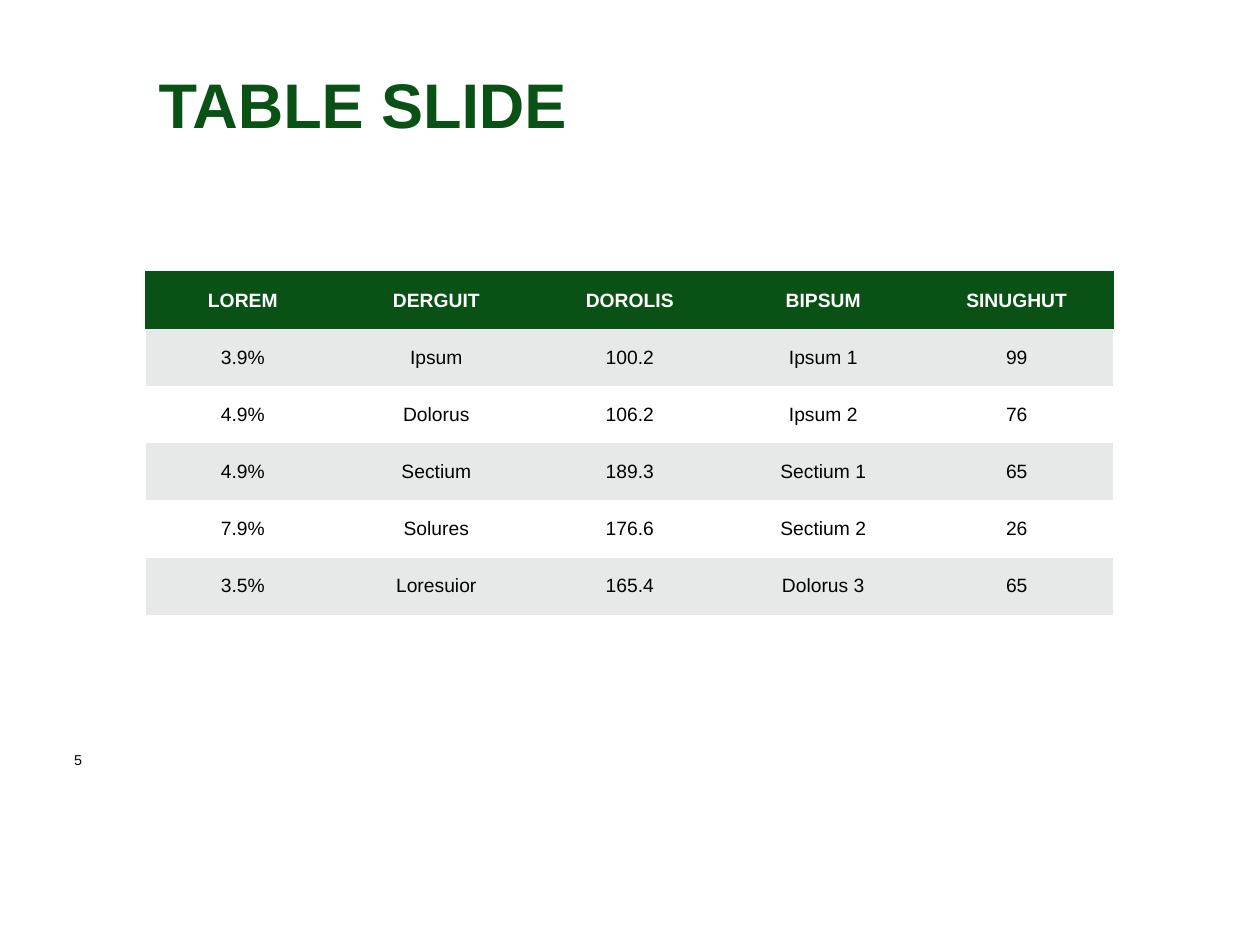
from dataclasses import dataclass

from pptx import Presentation
from pptx.dml.color import RGBColor
from pptx.enum.text import MSO_ANCHOR, PP_ALIGN
from pptx.oxml.xmlchemy import OxmlElement
from pptx.util import Pt

TOP, MIDDLE, BOTTOM = MSO_ANCHOR.TOP, MSO_ANCHOR.MIDDLE, MSO_ANCHOR.BOTTOM
CENTER = PP_ALIGN.CENTER
BLANK_LAYOUT = 6

HEADINGS = ["LOREM", "DERGUIT", "DOROLIS", "BIPSUM", "SINUGHUT"]
RECORDS = [
    ["3.9%", "Ipsum", "100.2", "Ipsum 1", "99"],
    ["4.9%", "Dolorus", "106.2", "Ipsum 2", "76"],
    ["4.9%", "Sectium", "189.3", "Sectium 1", "65"],
    ["7.9%", "Solures", "176.6", "Sectium 2", "26"],
    ["3.5%", "Loresuior", "165.4", "Dolorus 3", "65"],
]


@dataclass(frozen=True)
class Theme:
    font: str = "Arial"
    green: str = "095115"
    band: str = "E7E9E8"
    white: str = "FFFFFF"
    black: str = "000000"
    title_size: float = 36
    table_size: float = 11
    number_size: float = 8.2


class SlideBuilder:
    def __init__(self, slide, theme):
        self.slide = slide
        self.theme = theme

    def style(self, paragraph, size, color, bold=False):
        font = paragraph.font
        font.name, font.size, font.bold = self.theme.font, Pt(size), bold
        font.color.rgb = RGBColor.from_string(color)

    def text(self, wording, left, top, width, height, size, color,
             bold=False, anchor=TOP, bottom_inset=3.6):
        box = self.slide.shapes.add_textbox(Pt(left), Pt(top), Pt(width), Pt(height))
        frame = box.text_frame
        frame.word_wrap = True
        frame.vertical_anchor = anchor
        frame.margin_bottom = Pt(bottom_inset)
        frame.text = wording
        self.style(frame.paragraphs[0], size, color, bold)

    def borders(self, cell, colors):
        """Set each edge in schema order; None hides it."""
        properties = cell._tc.get_or_add_tcPr()
        for position, (edge, color) in enumerate(colors.items()):
            line = OxmlElement(f"a:{edge}")
            line.set("w", str(Pt(1)))
            fill = OxmlElement("a:solidFill" if color else "a:noFill")
            if color:
                shade = OxmlElement("a:srgbClr")
                shade.set("val", color)
                fill.append(shade)
            line.append(fill)
            properties.insert(position, line)

    def table(self, headings, records, left, top, column_width, row_height):
        theme = self.theme
        rows = [headings, *records]
        last = len(headings) - 1
        table = self.slide.shapes.add_table(
            len(rows), len(headings), Pt(left), Pt(top),
            Pt(column_width * len(headings)), Pt(row_height * len(rows))).table
        table.horz_banding = False
        for column in table.columns:
            column.width = Pt(column_width)
        for r, values in enumerate(rows):
            table.rows[r].height = Pt(row_height)
            header = r == 0
            fill = theme.green if header else theme.band if r % 2 else theme.white
            for c, value in enumerate(values):
                cell = table.cell(r, c)
                cell.fill.solid()
                cell.fill.fore_color.rgb = RGBColor.from_string(fill)
                cell.vertical_anchor = MIDDLE
                cell.margin_left = cell.margin_right = Pt(5)
                cell.margin_top = cell.margin_bottom = Pt(2.4)
                cell.text = value
                paragraph = cell.text_frame.paragraphs[0]
                paragraph.alignment = CENTER
                self.style(paragraph, theme.table_size,
                           theme.white if header else theme.black, header)
                self.borders(cell, {
                    "lnL": theme.green if header and c == 0 else None,
                    "lnR": theme.green if header and c == last else None,
                    "lnT": theme.green if header else None,
                    "lnB": None,
                })


def main():
    presentation = Presentation()
    presentation.slide_width, presentation.slide_height = Pt(720), Pt(540)
    slide = presentation.slides.add_slide(presentation.slide_layouts[BLANK_LAYOUT])
    theme = Theme()
    builder = SlideBuilder(slide, theme)

    # Slide number
    builder.text("5", 35.3, 425.5, 31, 28.8, theme.number_size, theme.black)

    # Data table
    builder.table(HEADINGS, RECORDS, 83.5, 155.3, 110.57, 32.66)

    # Title
    builder.text("TABLE SLIDE", 83.5, 32.4, 553, 48.2, theme.title_size,
                 theme.green, bold=True, anchor=BOTTOM, bottom_inset=0)

    presentation.save("out.pptx")


if __name__ == "__main__":
    main()
